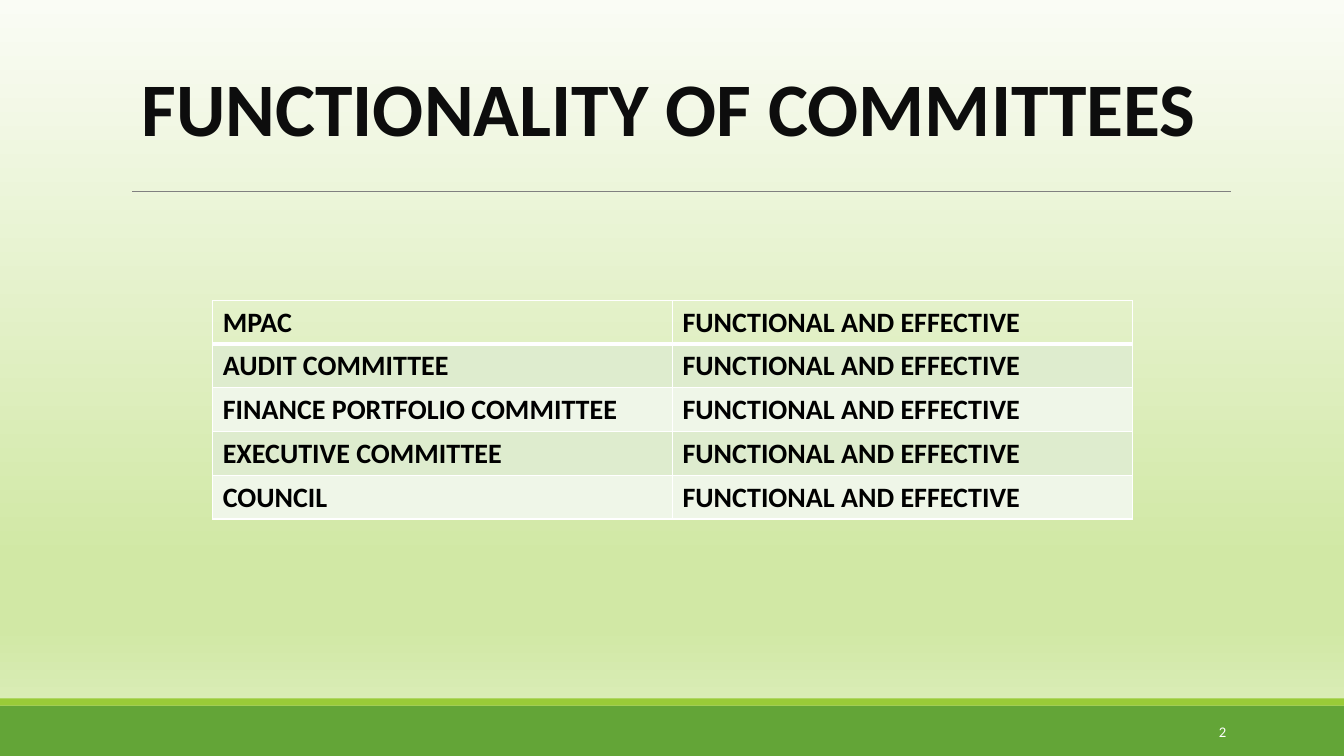
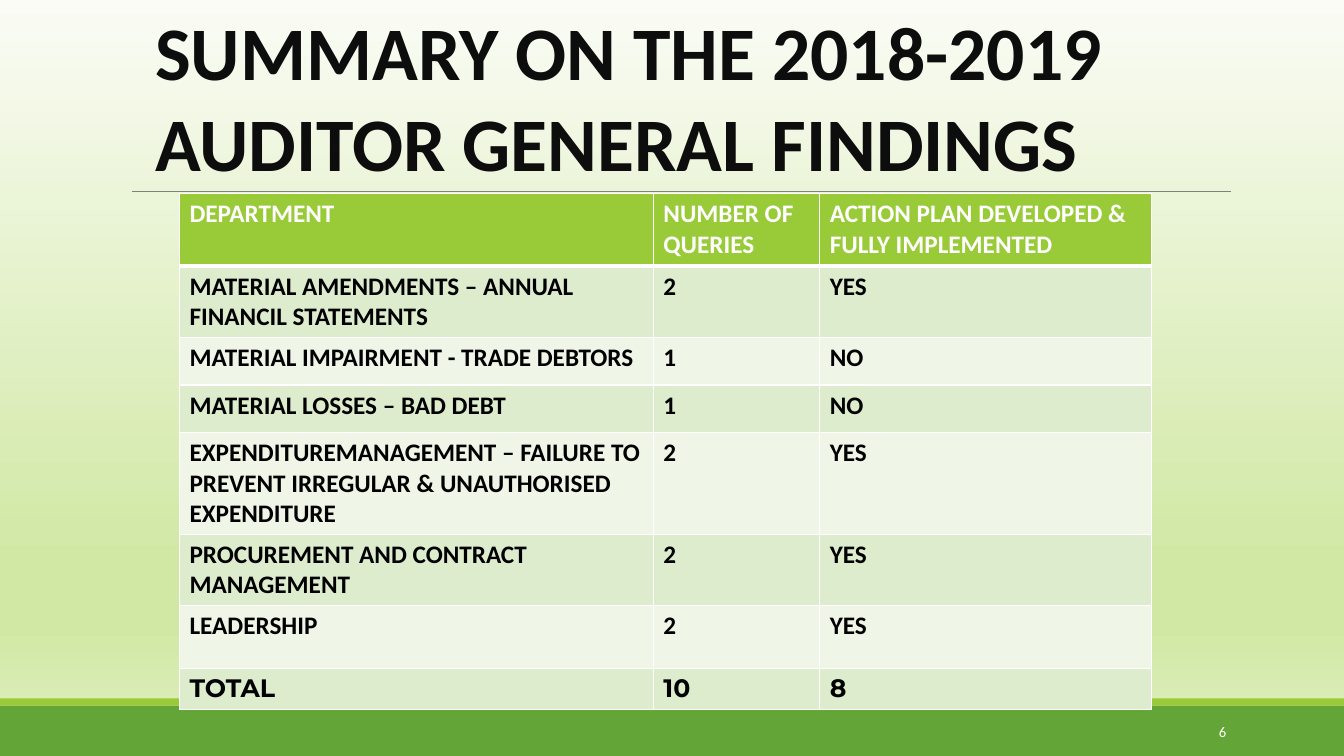
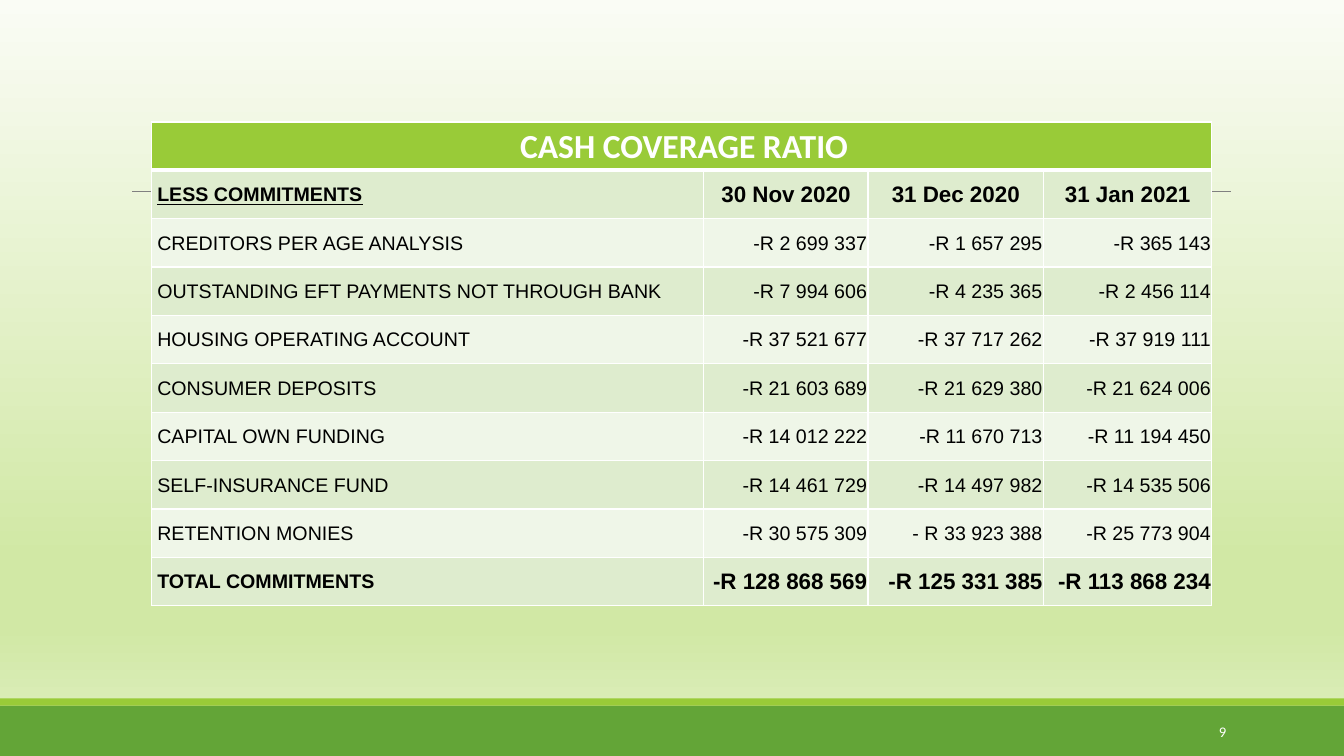
from lxml import etree
from pptx import Presentation
from pptx import util as u
from pptx.dml.color import RGBColor
from pptx.enum import shapes, text
from pptx.oxml.ns import qn

PX = 9144  # EMU per px, 100 px to the inch
WIDTH, HEIGHT = 1333, 750
WHITE, BLACK, INK, GREY = "FFFFFF", "000000", "0D0D0D", "808080"
LIME, GREEN = "99CB38", "63A537"
BANDS = ("DEECCE", "EFF6E8")
BACKDROP = [(0, "FAFCF5"), (74, "D1E8A5"), (83, "D1E8A5"), (100, "E0EFC3")]
LEFT, CENTER, RIGHT = text.PP_ALIGN.LEFT, text.PP_ALIGN.CENTER, text.PP_ALIGN.RIGHT
TOP, MIDDLE = text.MSO_ANCHOR.TOP, text.MSO_ANCHOR.MIDDLE
CELL_MARGINS = (10, 5, 10, 5)

GOOD = "FUNCTIONAL AND EFFECTIVE"
COMMITTEES = [
    ("MPAC", GOOD),
    ("AUDIT COMMITTEE", GOOD),
    ("FINANCE PORTFOLIO COMMITTEE", GOOD),
    ("EXECUTIVE COMMITTEE", GOOD),
    ("COUNCIL", GOOD),
]
FINDINGS = [
    ("DEPARTMENT", "NUMBER OF QUERIES", "ACTION PLAN DEVELOPED & FULLY IMPLEMENTED"),
    ("MATERIAL AMENDMENTS – ANNUAL FINANCIL STATEMENTS", "2", "YES"),
    ("MATERIAL IMPAIRMENT - TRADE DEBTORS", "1", "NO"),
    ("MATERIAL LOSSES – BAD DEBT", "1", "NO"),
    ("EXPENDITUREMANAGEMENT – FAILURE TO PREVENT IRREGULAR & UNAUTHORISED EXPENDITURE", "2", "YES"),
    ("PROCUREMENT AND CONTRACT MANAGEMENT", "2", "YES"),
    ("LEADERSHIP", "2", "YES"),
    ("TOTAL", "10", "8"),
]
COMMITMENTS = [
    ("CASH COVERAGE RATIO", "", "", ""),
    ("LESS COMMITMENTS", "30 Nov 2020", "31 Dec 2020", "31 Jan 2021"),
    ("CREDITORS PER AGE ANALYSIS", "-R 2 699 337", "-R 1 657 295", "-R 365 143"),
    ("OUTSTANDING EFT PAYMENTS NOT THROUGH BANK", "-R 7 994 606", "-R 4 235 365", "-R 2 456 114"),
    ("HOUSING OPERATING ACCOUNT", "-R 37 521 677", "-R 37 717 262", "-R 37 919 111"),
    ("CONSUMER DEPOSITS", "-R 21 603 689", "-R 21 629 380", "-R 21 624 006"),
    ("CAPITAL OWN FUNDING", "-R 14 012 222", "-R 11 670 713", "-R 11 194 450"),
    ("SELF-INSURANCE FUND", "-R 14 461 729", "-R 14 497 982", "-R 14 535 506"),
    ("RETENTION MONIES", "-R 30 575 309", "- R 33 923 388", "-R 25 773 904"),
    ("TOTAL COMMITMENTS", "-R 128 868 569", "-R 125 331 385", "-R 113 868 234"),
]


def emu(*lengths):
    return [u.Emu(length * PX) for length in lengths]


def rgb(colour):
    return RGBColor.from_string(colour)


def write(frame, words, font="Calibri", size=18, colour=BLACK, bold=False,
          underline=False, align=LEFT):
    for index, line in enumerate(words.split("\n")):
        para = frame.paragraphs[0] if index == 0 else frame.add_paragraph()
        para.alignment = align
        span = para.add_run()
        span.text = line
        span.font.name, span.font.size = font, u.Pt(size)
        span.font.bold, span.font.underline = bold, underline
        span.font.color.rgb = rgb(colour)


def add_text(page, place, words, anchor=TOP, **style):
    frame = page.shapes.add_textbox(*emu(*place)).text_frame
    frame.word_wrap = True
    frame.vertical_anchor = anchor
    write(frame, words, **style)


def add_title(page, place, words, align=LEFT):
    add_text(page, place, words, size=54, colour=INK, bold=True, align=align)


def add_band(page, top, height, colour):
    band = page.shapes.add_shape(shapes.MSO_SHAPE.RECTANGLE, *emu(0, top, WIDTH, height))
    band.shadow.inherit = False
    band.fill.solid()
    band.fill.fore_color.rgb = rgb(colour)
    band.line.fill.background()


def paint_backdrop(master):
    """Give every slide the vertical gradient, through the master."""
    fill = master.background.fill
    fill.gradient()
    fill.gradient_angle = 270
    stops = master.element.find(".//" + qn("a:gsLst"))
    for stop in list(stops):
        stops.remove(stop)
    for percent, colour in BACKDROP:
        stop = etree.SubElement(stops, qn("a:gs"), pos=str(percent * 1000))
        etree.SubElement(stop, qn("a:srgbClr"), val=colour)


def add_page(deck, number):
    page = deck.slides.add_slide(deck.slide_layouts[6])
    rule = page.shapes.add_connector(shapes.MSO_CONNECTOR.STRAIGHT, *emu(131, 190, 1221, 190))
    rule.line.color.rgb, rule.line.width = rgb(GREY), u.Pt(0.5)
    etree.SubElement(rule.element.spPr, qn("a:effectLst"))
    add_band(page, 700, 50, GREEN)
    add_band(page, 693, 7, LIME)
    add_text(page, (1083, 706, 143, 40), str(number), MIDDLE,
             size=10.5, colour=WHITE, align=RIGHT)
    return page


def add_borders(cell, bottom):
    """White edges, 1 pt wide except for the bottom one."""
    properties = cell._tc.get_or_add_tcPr()
    for index, (edge, points) in enumerate([("L", 1), ("R", 1), ("T", 1), ("B", bottom)]):
        line = etree.Element(qn("a:ln" + edge), w=str(u.Pt(points)))
        etree.SubElement(etree.SubElement(line, qn("a:solidFill")), qn("a:srgbClr"), val=WHITE)
        properties.insert(index, line)


def add_grid(page, corner, widths, heights, rows, style_of, head_fill=LIME,
             anchor=TOP, margins_of=lambda col: CELL_MARGINS):
    """Banded table; style_of(row, col) gives the text format of a cell."""
    size = (sum(widths), sum(heights))
    table = page.shapes.add_table(len(rows), len(widths), *emu(*corner, *size)).table
    table.first_row = table.horz_banding = False
    for column, width in zip(table.columns, emu(*widths)):
        column.width = width
    for line, height in zip(table.rows, emu(*heights)):
        line.height = height
    for row, values in enumerate(rows):
        fill = BANDS[(row - 1) % 2] if row else head_fill
        for col, words in enumerate(values):
            cell = table.cell(row, col)
            cell.vertical_anchor = anchor
            (cell.margin_left, cell.margin_top,
             cell.margin_right, cell.margin_bottom) = emu(*margins_of(col))
            if fill:
                cell.fill.solid()
                cell.fill.fore_color.rgb = rgb(fill)
            else:
                cell.fill.background()
            add_borders(cell, bottom=1 if row else 3)
            if words:
                write(cell.text_frame, words, **style_of(row, col))
    return table


def committee_style(row, col):
    return dict(size=20, bold=True)


def finding_style(row, col):
    last = row == len(FINDINGS) - 1
    return dict(bold=True, colour=BLACK if row else WHITE,
                font="Montserrat" if last else "Calibri")


def commitment_style(row, col):
    if row == 0:
        return dict(size=24, colour=WHITE, bold=True, align=CENTER)
    dates, total = row == 1, row == len(COMMITMENTS) - 1
    strong = dates or total
    style = dict(font="Arial", size=16 if strong and col else 14, bold=strong)
    if col == 0:
        return dict(style, underline=dates)
    return dict(style, align=CENTER if dates else RIGHT)


def main():
    deck = Presentation()
    deck.slide_width, deck.slide_height = emu(WIDTH, HEIGHT)
    paint_backdrop(deck.slide_master)

    page = add_page(deck, 2)
    add_title(page, (66, 55, 1195, 101), "FUNCTIONALITY OF COMMITTEES", CENTER)
    add_grid(page, (211, 298), [456] * 2, [43] * 5, COMMITTEES, committee_style,
             head_fill=None)

    page = add_page(deck, 6)
    add_grid(page, (178, 192), [470, 165, 329], [72, 71, 47, 47, 101, 71, 62, 41],
             FINDINGS, finding_style)
    add_title(page, (144, 0, 1066, 192), "SUMMARY ON THE 2018-2019\nAUDITOR GENERAL FINDINGS")

    page = add_page(deck, 9)
    table = add_grid(page, (150, 121), [548, 163, 174, 167], [48] * 10, COMMITMENTS,
                     commitment_style, anchor=MIDDLE,
                     margins_of=lambda col: (1 if col else 6, 1, 1, 0))
    table.cell(0, 0).merge(table.cell(0, 3))

    deck.save("out.pptx")


if __name__ == "__main__":
    main()
